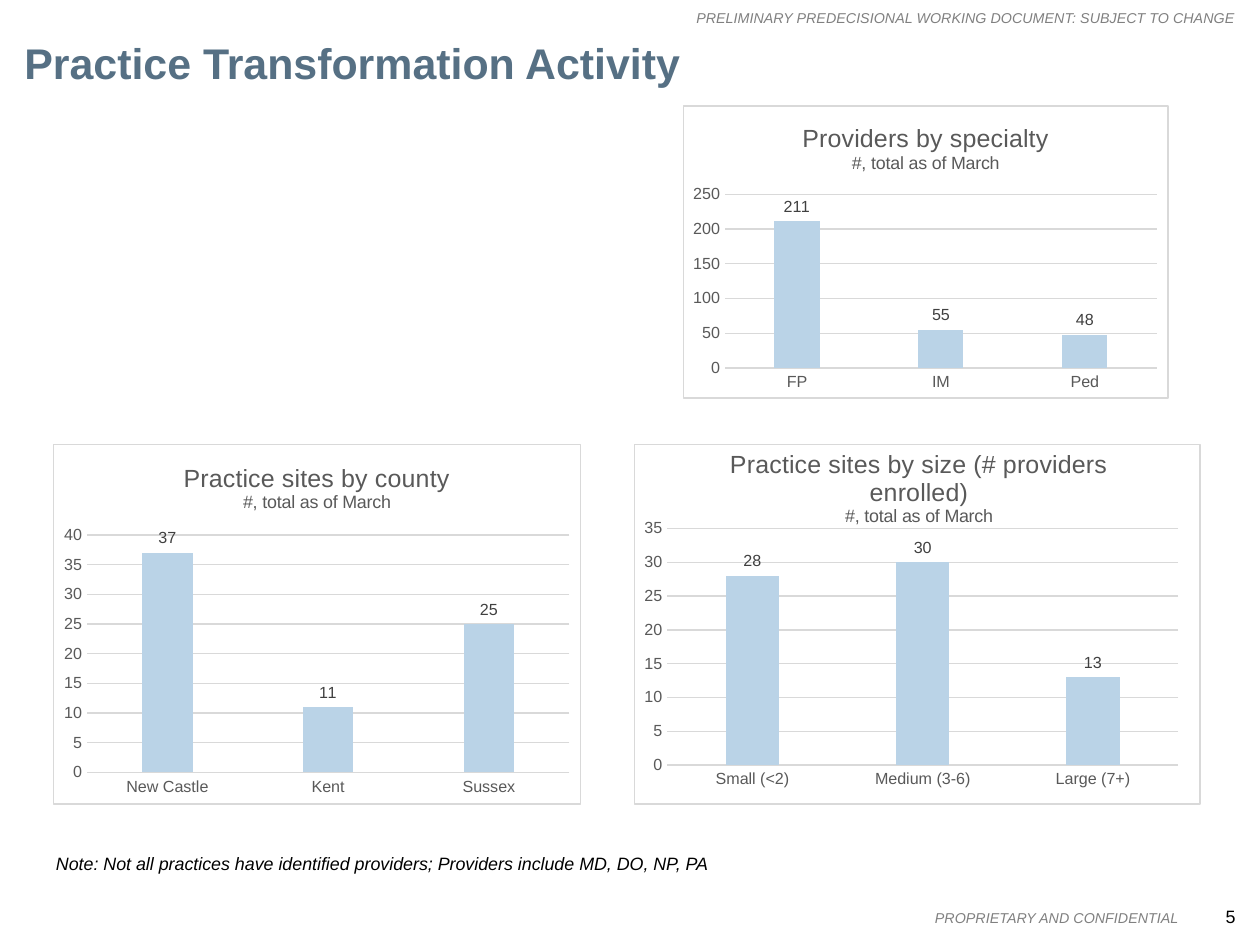
from dataclasses import dataclass
from typing import Any, Optional

from lxml.etree import _Element as Element
from pptx import Presentation
from pptx.chart.data import CategoryChartData
from pptx.dml.color import RGBColor
from pptx.enum.chart import XL_CHART_TYPE as ChartType
from pptx.enum.chart import XL_LABEL_POSITION as LabelPosition
from pptx.enum.chart import XL_TICK_MARK as TickMark
from pptx.enum.text import MSO_ANCHOR as Anchor
from pptx.enum.text import PP_ALIGN as Align
from pptx.oxml import parse_xml
from pptx.oxml.ns import nsdecls
from pptx.slide import Slide
from pptx.util import Inches, Pt

SLIDE_WIDTH, SLIDE_HEIGHT = Inches(9.8), Inches(7.35)
COLUMNS, ROWS = 98, 73.5
FONT = "Arial"
GRAY, AXIS_TEXT, LABEL_TEXT = "808080", "595959", "404040"
RULE, BAR, WHITE, BLACK, HEADING = "D9D9D9", "BAD3E7", "FFFFFF", "000000", "567084"
SUBTITLE = "#, total as of March"
NUMBER_FORMAT = "#,##0"
BOTTOM_ROW, BOTTOM_HEIGHT = 34.5, 28.1


@dataclass(frozen=True)
class Area:
    column: float
    row: float
    columns: float
    rows: float

    def lengths(self) -> tuple[int, int, int, int]:
        return (
            int(SLIDE_WIDTH * self.column / COLUMNS),
            int(SLIDE_HEIGHT * self.row / ROWS),
            int(SLIDE_WIDTH * self.columns / COLUMNS),
            int(SLIDE_HEIGHT * self.rows / ROWS),
        )


@dataclass(frozen=True)
class TextItem:
    text: str
    area: Area
    size: float
    color: str
    align: Align = Align.RIGHT
    anchor: Anchor = Anchor.TOP
    bold: bool = False
    italic: bool = False
    wrap: bool = False
    inset: float = 0


@dataclass(frozen=True)
class BarChart:
    title: str
    area: Area
    values: dict[str, int]
    plot_percent: tuple[float, float, float, float]
    title_percent: Optional[tuple[float, float]] = None


TEXTS = [
    TextItem("PROPRIETARY AND CONFIDENTIAL", Area(72.4, 70.7, 19.3, 1.3), 8, GRAY,
             anchor=Anchor.MIDDLE, italic=True),
    TextItem("5", Area(94.4, 70.4, 1.7, 1.7), 10, BLACK, anchor=Anchor.MIDDLE),
    TextItem("PRELIMINARY PREDECISIONAL WORKING DOCUMENT: SUBJECT TO CHANGE",
             Area(53.7, 0.75, 42.4, 1.3), 8, GRAY, italic=True),
    TextItem("Practice Transformation Activity", Area(1.9, 2.85, 94.3, 4), 24, HEADING,
             align=Align.LEFT, bold=True, wrap=True),
    TextItem("Note: Not all practices have identified providers; "
             "Providers include MD, DO, NP, PA",
             Area(3.3, 65.65, 52.8, 3.2), 10, BLACK, align=Align.CENTER,
             italic=True, inset=0.07),
]

CHARTS = [
    BarChart("Practice sites by county", Area(4.1, BOTTOM_ROW, 41.1, BOTTOM_HEIGHT),
             {"New Castle": 37, "Kent": 11, "Sussex": 25},
             (6.4, 25.3, 91.5, 65.9)),
    BarChart("Practice sites by size (# providers enrolled)",
             Area(49.3, BOTTOM_ROW, 44.1, BOTTOM_HEIGHT),
             {"Small (<2)": 28, "Medium (3-6)": 30, "Large (7+)": 13},
             (5.8, 23.4, 90.3, 65.8), (16.2, 0)),
    BarChart("Providers by specialty", Area(53.1, 8.2, 37.8, 22.8),
             {"FP": 211, "IM": 55, "Ped": 48},
             (8.6, 30.2, 89.1, 59.6)),
]


def rgb(color: str) -> RGBColor:
    return RGBColor.from_string(color)


def apply_format(target: Any, values: dict[str, Any]) -> None:
    for name, value in values.items():
        setattr(target, name, value)


def format_font(font: Any, size: float, color: str, bold: bool = False,
                italic: bool = False) -> None:
    apply_format(font, {"name": FONT, "size": Pt(size), "bold": bold, "italic": italic})
    font.color.rgb = rgb(color)


def format_line(line: Any) -> None:
    line.color.rgb = rgb(RULE)
    line.width = Pt(0.75)


def add_text(slide: Slide, item: TextItem) -> None:
    frame = slide.shapes.add_textbox(*item.area.lengths()).text_frame
    inset = Inches(item.inset)
    apply_format(frame, {
        "word_wrap": item.wrap, "vertical_anchor": item.anchor,
        "margin_left": inset, "margin_right": inset,
        "margin_top": inset, "margin_bottom": inset,
    })
    paragraph = frame.paragraphs[0]
    paragraph.alignment = item.align
    run = paragraph.add_run()
    run.text = item.text
    format_font(run.font, item.size, item.color, item.bold, item.italic)


def manual_layout(percents: tuple[float, ...], inner: bool) -> Element:
    target = '<c:layoutTarget val="inner"/>' if inner else ""
    modes = '<c:xMode val="edge"/><c:yMode val="edge"/>'
    lengths = "".join(f'<c:{name} val="{percent / 100:.3f}"/>'
                      for name, percent in zip("xywh", percents))
    return parse_xml(f'<c:layout {nsdecls("c")}><c:manualLayout>{target}{modes}{lengths}'
                     "</c:manualLayout></c:layout>")


def place_parts(chart_space: Element, item: BarChart) -> None:
    for layout in chart_space.xpath("c:chart/c:plotArea/c:layout"):
        layout.getparent().remove(layout)
    chart_space.xpath("c:chart/c:plotArea")[0].insert(
        0, manual_layout(item.plot_percent, True))
    if item.title_percent:
        for layout in chart_space.xpath("c:chart/c:title/c:layout"):
            layout.getparent().remove(layout)
        chart_space.xpath("c:chart/c:title/c:tx")[0].addnext(
            manual_layout(item.title_percent, False))


def frame_chart(chart_space: Element) -> None:
    def fill(color: str) -> str:
        return f'<a:solidFill><a:srgbClr val="{color}"/></a:solidFill>'

    chart_space.xpath("c:chart")[0].addnext(parse_xml(
        f'<c:spPr {nsdecls("c", "a")}>{fill(WHITE)}'
        f'<a:ln w="{Pt(0.75)}">{fill(RULE)}</a:ln></c:spPr>'))


def add_bar_chart(slide: Slide, item: BarChart) -> None:
    data = CategoryChartData(number_format=NUMBER_FORMAT)
    data.categories = list(item.values)
    data.add_series("Series 1", list(item.values.values()))
    chart = slide.shapes.add_chart(
        ChartType.COLUMN_CLUSTERED, *item.area.lengths(), data).chart
    format_font(chart.font, 10, BLACK)
    chart.has_legend = False

    title_frame = chart.chart_title.text_frame
    for index, (text, size) in enumerate([(item.title, 14), (SUBTITLE, 10)]):
        paragraph = title_frame.add_paragraph() if index else title_frame.paragraphs[0]
        run = paragraph.add_run()
        run.text = text
        format_font(run.font, size, AXIS_TEXT)

    for axis in (chart.category_axis, chart.value_axis):
        apply_format(axis, {"major_tick_mark": TickMark.NONE,
                            "minor_tick_mark": TickMark.NONE})
        format_font(axis.tick_labels.font, 9, AXIS_TEXT)
    format_line(chart.category_axis.format.line)
    chart.value_axis.format.line.fill.background()
    format_line(chart.value_axis.major_gridlines.format.line)
    apply_format(chart.value_axis.tick_labels,
                 {"number_format": NUMBER_FORMAT, "number_format_is_linked": False})

    plot = chart.plots[0]
    apply_format(plot, {"gap_width": 219, "overlap": -27,
                        "vary_by_categories": False, "has_data_labels": True})
    apply_format(plot.data_labels, {
        "show_value": True, "position": LabelPosition.OUTSIDE_END,
        "number_format": NUMBER_FORMAT, "number_format_is_linked": False,
    })
    format_font(plot.data_labels.font, 9, LABEL_TEXT)
    bar_fill = plot.series[0].format.fill
    bar_fill.solid()
    bar_fill.fore_color.rgb = rgb(BAR)

    place_parts(chart.element, item)
    frame_chart(chart.element)


def main() -> None:
    presentation = Presentation()
    apply_format(presentation, {"slide_width": SLIDE_WIDTH, "slide_height": SLIDE_HEIGHT})
    slide = presentation.slides.add_slide(presentation.slide_layouts[6])
    for chart in CHARTS:
        add_bar_chart(slide, chart)
    for text in TEXTS:
        add_text(slide, text)
    presentation.save("out.pptx")


if __name__ == "__main__":
    main()
